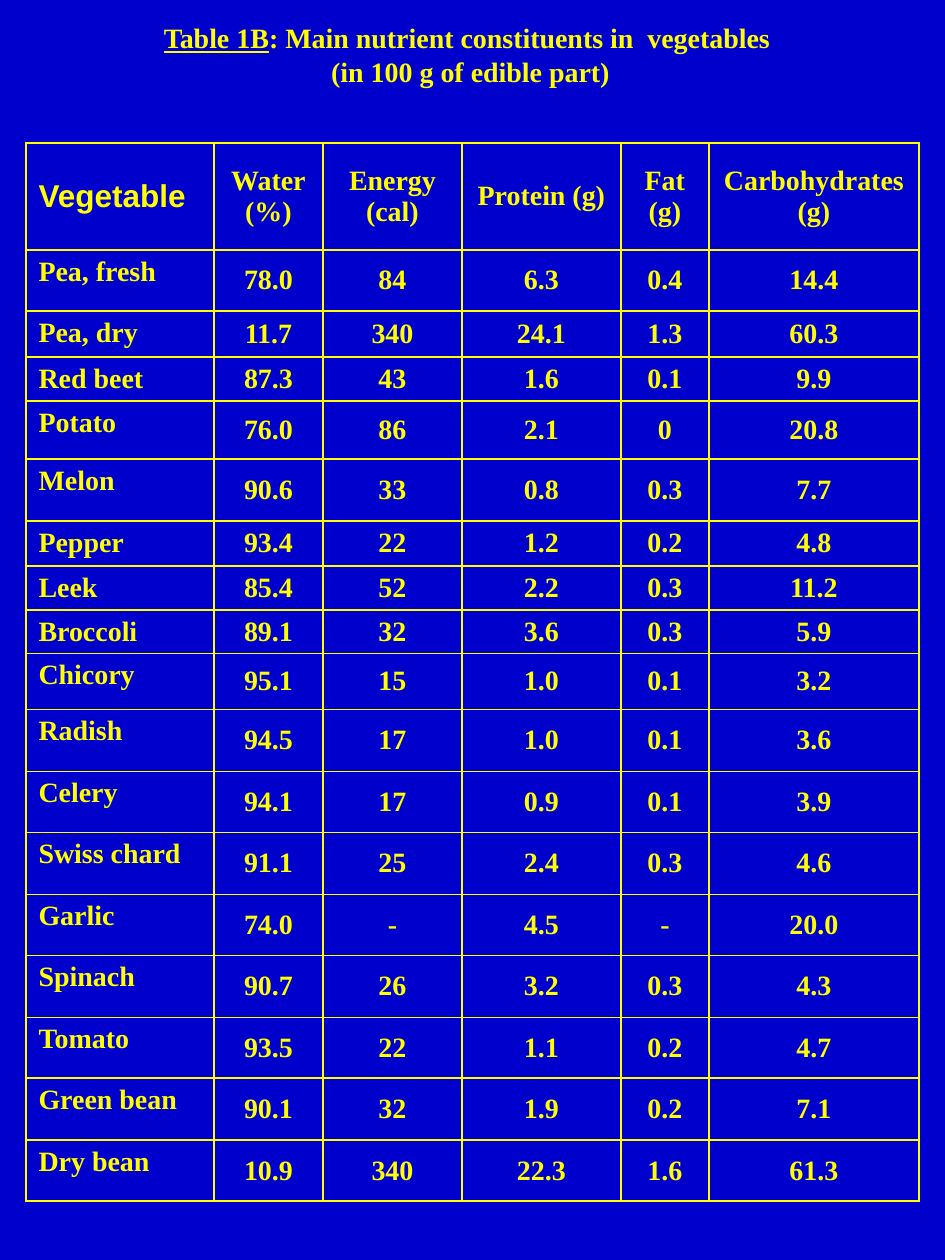
from lxml import etree
from pptx import Presentation
from pptx.dml.color import RGBColor as RGB
from pptx.enum.text import MSO_ANCHOR as ANCHOR, MSO_AUTO_SIZE as AUTO, PP_ALIGN as ALIGN
from pptx.oxml.ns import qn
from pptx.util import Pt

PX = 914400 // 126
COLORS = {"back": "0000CC", "ink": "FFFF00"}
SERIF, SANS = "Times New Roman", "Arial"


def style(r, font=SERIF, size=16):
    r.font.name, r.font.size, r.font.bold = font, Pt(size), True
    r.font.color.rgb = RGB.from_string(COLORS["ink"])


def add_borders(cell):
    tcPr = cell._tc.get_or_add_tcPr()
    for i, side in enumerate(("lnL", "lnR", "lnT", "lnB")):
        ln = etree.Element(qn(f"a:{side}"), w=str(Pt(1)))
        fill = etree.SubElement(ln, qn("a:solidFill"))
        etree.SubElement(fill, qn("a:srgbClr"), val=COLORS["ink"])
        tcPr.insert(i, ln)


prs = Presentation()
prs.slide_width, prs.slide_height = 945 * PX, 1260 * PX
s = prs.slides.add_slide(prs.slide_layouts[5])
s.background.fill.solid()
s.background.fill.fore_color.rgb = RGB.from_string(COLORS["back"])

# Title
title = s.shapes.title
title.left, title.top, title.width, title.height = [v * PX for v in (45, 25, 851, 59)]
tf = title.text_frame
tf.auto_size, tf.vertical_anchor = AUTO.NONE, ANCHOR.MIDDLE
p = tf.paragraphs[0]
p.text = ": Main nutrient constituents in  vegetables \v(in 100 g of edible part)"
p.alignment = ALIGN.CENTER
label = p.add_run()
label.text = "Table 1B"
p._p.insert(1, label._r)
for r in p.runs:
    style(r)
label.font.underline = True

# Table contents
rows = [
    ("Vegetable", "Water\n(%)", "Energy (cal)", "Protein (g)", "Fat\n(g)", "Carbohydrates (g)"),
    ("Pea, fresh", "78.0", "84", "6.3", "0.4", "14.4"),
    ("Pea, dry", "11.7", "340", "24.1", "1.3", "60.3"),
    ("Red beet", "87.3", "43", "1.6", "0.1", "9.9"),
    ("Potato", "76.0", "86", "2.1", "0", "20.8"),
    ("Melon", "90.6", "33", "0.8", "0.3", "7.7"),
    ("Pepper", "93.4", "22", "1.2", "0.2", "4.8"),
    ("Leek", "85.4", "52", "2.2", "0.3", "11.2"),
    ("Broccoli", "89.1", "32", "3.6", "0.3", "5.9"),
    ("Chicory", "95.1", "15", "1.0", "0.1", "3.2"),
    ("Radish", "94.5", "17", "1.0", "0.1", "3.6"),
    ("Celery", "94.1", "17", "0.9", "0.1", "3.9"),
    ("Swiss chard", "91.1", "25", "2.4", "0.3", "4.6"),
    ("Garlic", "74.0", "-", "4.5", "-", "20.0"),
    ("Spinach", "90.7", "26", "3.2", "0.3", "4.3"),
    ("Tomato", "93.5", "22", "1.1", "0.2", "4.7"),
    ("Green bean", "90.1", "32", "1.9", "0.2", "7.1"),
    ("Dry bean", "10.9", "340", "22.3", "1.6", "61.3"),
]
widths = [188, 109, 139, 159, 88, 210]
heights = [107, 61, 46, 44, 58, 62, 45, 44, 43, 56] + [62, 61] * 4

# Table grid
table = s.shapes.add_table(len(rows), len(widths), 26 * PX, 143 * PX,
                           sum(widths) * PX, sum(heights) * PX).table
table.first_row = table.horz_banding = False
for column, width in zip(table.columns, widths):
    column.width = width * PX
for row, height in zip(table.rows, heights):
    row.height = height * PX

# Table cells
for i, values in enumerate(rows):
    for j, value in enumerate(values):
        cell = table.cell(i, j)
        cell.text_frame.text = value
        cell.fill.background()
        add_borders(cell)
        cell.vertical_anchor = ANCHOR.TOP if i and j == 0 else ANCHOR.MIDDLE
        for p in cell.text_frame.paragraphs:
            p.alignment = ALIGN.CENTER if j else ALIGN.LEFT
            for r in p.runs:
                style(r)

# Corner heading
style(table.cell(0, 0).text_frame.paragraphs[0].runs[0], SANS, 18)

prs.save("out.pptx")
